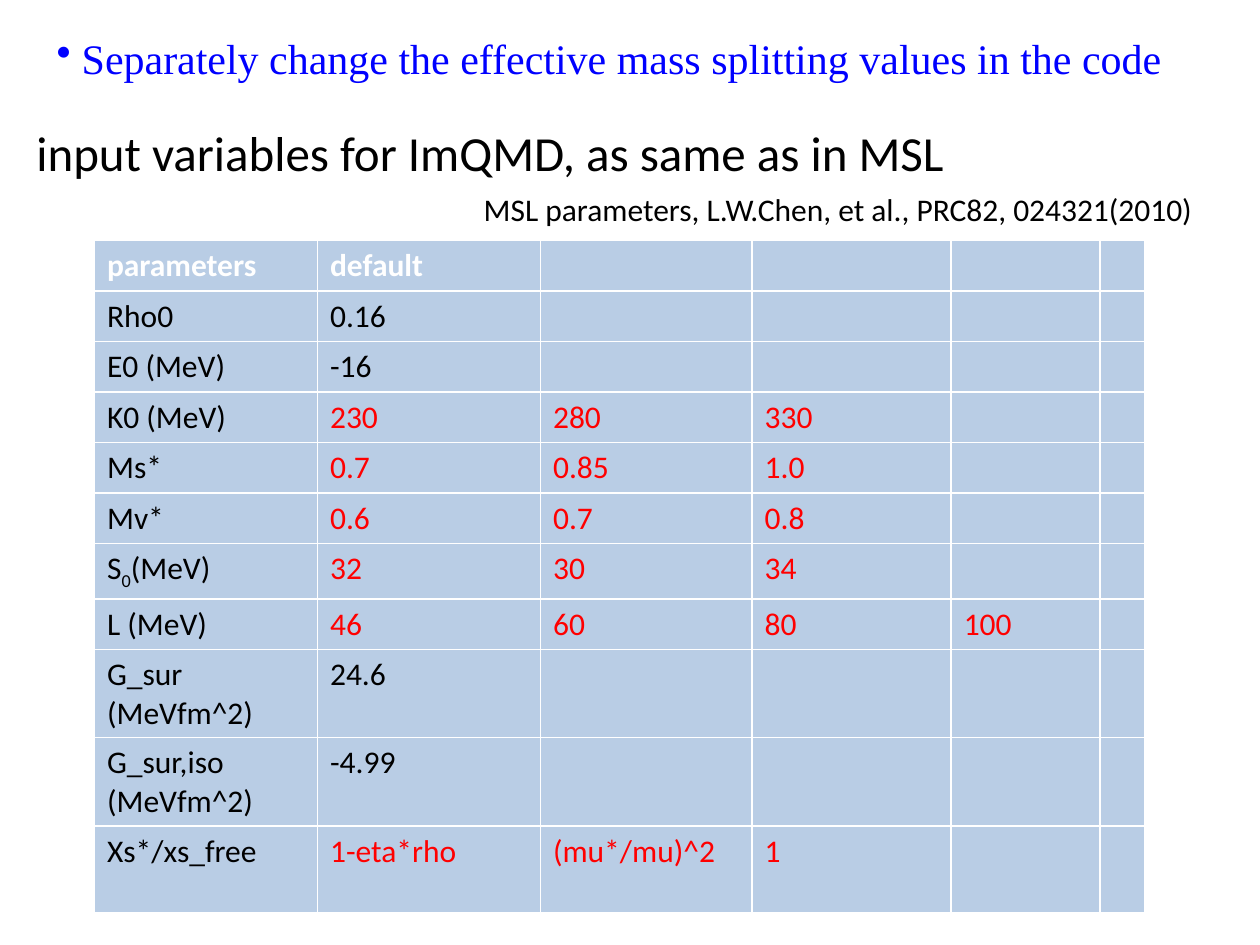
"""Build the slide listing the ImQMD input variables."""
from dataclasses import dataclass

from lxml import etree
from pptx import Presentation
from pptx import util as u
from pptx.dml.color import RGBColor
from pptx.enum import text
from pptx.oxml.ns import qn


@dataclass(frozen=True)
class Theme:
    ink: str = "000000"
    accent: str = "0000FF"
    varied: str = "FF0000"
    header: str = "FFFFFF"
    cell: str = "B9CDE5"
    sans: str = "Calibri"
    serif: str = "Times New Roman"
    heading: int = 28
    lead: int = 24
    body: int = 18


HEADER = ["parameters", "default"]
PARAMETERS = [
    (["Rho0"], ["0.16"]),
    (["E0 (MeV)"], ["-16"]),
    (["K0 (MeV)"], ["230", "280", "330"]),
    (["Ms*"], ["0.7", "0.85", "1.0"]),
    (["Mv*"], ["0.6", "0.7", "0.8"]),
    (["S", "0", "(MeV)"], ["32", "30", "34"]),
    (["L (MeV)"], ["46", "60", "80", "100"]),
    (["G_sur (MeVfm^2)"], ["24.6"]),
    (["G_sur,iso (MeVfm^2)"], ["-4.99"]),
    (["Xs*/xs_free"], ["1-eta*rho", "(mu*/mu)^2", "1"]),
]
COLUMN_WIDTHS = [1.77, 1.77, 1.68, 1.58, 1.18, 0.36]
ROW_HEIGHTS = [0.4] * 8 + [0.69] * 3


class SlideBuilder:
    """Add styled elements to the current slide."""

    def __init__(self, page, theme):
        self.page = page
        self.theme = theme

    def span(self, para, words, size, color, font=None, bold=False, subscript=False):
        """Append one run to a paragraph."""
        span = para.add_run()
        span.text = words
        span.font.size = u.Pt(size)
        span.font.name = font or self.theme.sans
        span.font.bold = bold
        span.font.color.rgb = RGBColor.from_string(color)
        if subscript:
            span.font._element.set("baseline", "-25000")

    def textbox(self, place, words, size, color, font=None, wrap=False):
        """Add a one-paragraph text box and return its paragraph."""
        box = self.page.shapes.add_textbox(*map(u.Inches, place))
        box.text_frame.word_wrap = wrap
        box.text_frame.auto_size = text.MSO_AUTO_SIZE.SHAPE_TO_FIT_TEXT
        para = box.text_frame.paragraphs[0]
        self.span(para, words, size, color, font)
        return para

    def bullet(self, para, hang):
        """Give a paragraph a round bullet with a hanging indent."""
        properties = para._p.get_or_add_pPr()
        properties.set("marL", str(u.Inches(hang)))
        properties.set("indent", str(-u.Inches(hang)))
        etree.SubElement(properties, qn("a:buChar")).set("char", "•")

    def table(self, left, top, widths, heights):
        """Add an evenly filled table and return it."""
        place = (left, top, sum(widths), sum(heights))
        frame = self.page.shapes.add_table(
            len(heights), len(widths), *map(u.Inches, place))
        table = frame.table
        table.horz_banding = False
        for column, width in zip(table.columns, widths):
            column.width = u.Inches(width)
        for row, height in zip(table.rows, heights):
            row.height = u.Inches(height)
        for cell in table.iter_cells():
            cell.fill.solid()
            cell.fill.fore_color.rgb = RGBColor.from_string(self.theme.cell)
        return table

    def cell(self, cell, parts, color, bold=False):
        """Write a cell whose every second part is a subscript."""
        para = cell.text_frame.paragraphs[0]
        for index, words in enumerate(parts):
            self.span(para, words, self.theme.body, color, bold=bold,
                      subscript=index % 2 == 1)


def main():
    """Create the deck and save it."""
    theme = Theme()
    deck = Presentation()
    deck.slide_width, deck.slide_height = u.Inches(10), u.Inches(7.5)
    builder = SlideBuilder(deck.slides.add_slide(deck.slide_layouts[6]), theme)

    lead = builder.textbox(
        (0.35, 0.21, 9.02, 0.5),
        "Separately change the effective mass splitting values in the code",
        theme.lead, theme.accent, theme.serif, wrap=True)
    builder.bullet(lead, 0.2)
    builder.textbox((0.19, 0.92, 7.49, 0.57),
                    "input variables for ImQMD, as same as in MSL",
                    theme.heading, theme.ink)
    builder.textbox((3.74, 1.46, 5.89, 0.4),
                    "MSL parameters, L.W.Chen, et al., PRC82, 024321(2010)",
                    theme.body, theme.ink)

    table = builder.table(0.75, 1.91, COLUMN_WIDTHS, ROW_HEIGHTS)
    for column, title in enumerate(HEADER):
        builder.cell(table.cell(0, column), [title], theme.header, bold=True)
    for row, (label, values) in enumerate(PARAMETERS, start=1):
        builder.cell(table.cell(row, 0), label, theme.ink)
        color = theme.varied if len(values) > 1 else theme.ink
        for column, value in enumerate(values, start=1):
            builder.cell(table.cell(row, column), [value], color)

    deck.save("out.pptx")


if __name__ == "__main__":
    main()
